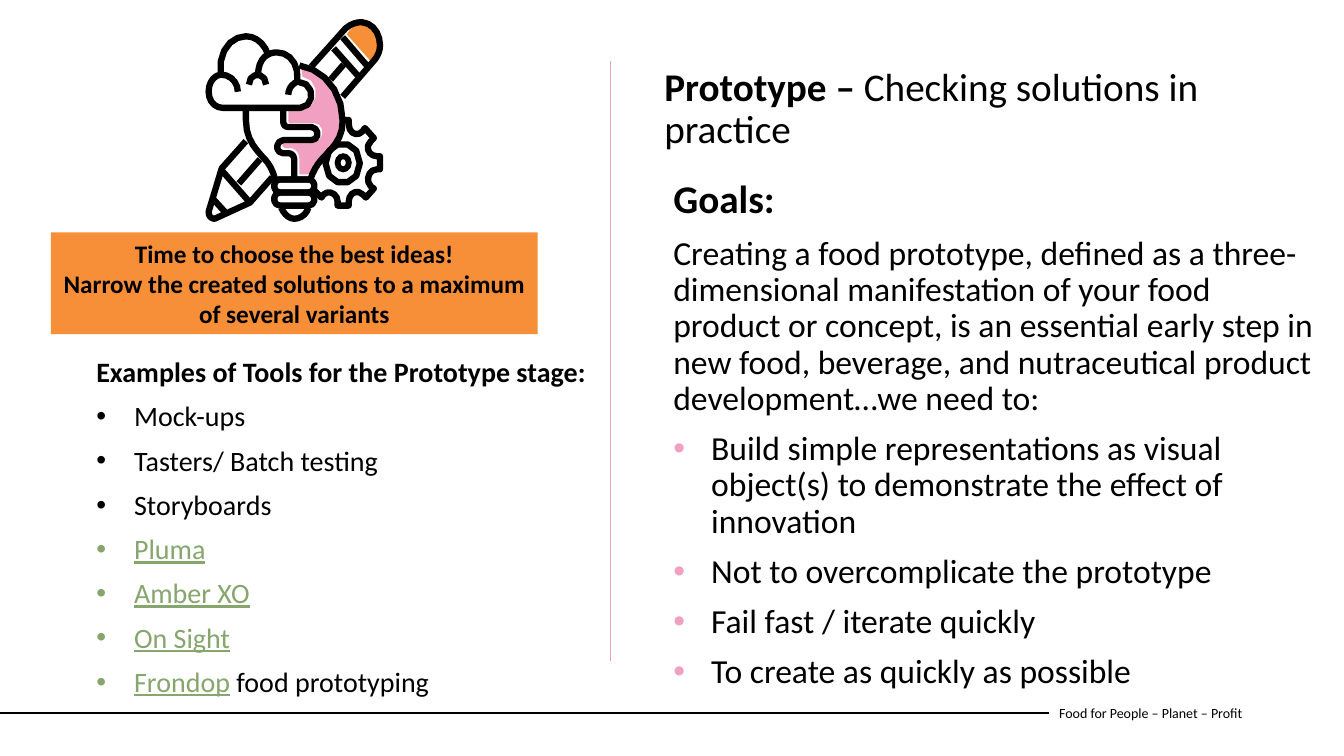
import lxml.etree
import pptx
import pptx.dml.color
import pptx.enum.shapes
import pptx.enum.text
import pptx.oxml.ns
import pptx.util

ROWS = 750
COLUMNS = ROWS * 16 / 9
CELL = pptx.util.Inches(7.5) / ROWS
BLACK, PINK, ORANGE, GREEN = "000000", "F1A0C2", "F68F37", "87A66E"

GOALS = [
    "Build simple representations as visual object(s) to demonstrate the effect of innovation",
    "Not to overcomplicate the prototype",
    "Fail fast / iterate quickly",
    "To create as quickly as possible",
]
PURPOSE = (
    "Creating a food prototype, defined as a three-dimensional manifestation of your food "
    "product or concept, is an essential early step in new food, beverage, and nutraceutical "
    "product development…we need to:"
)
METHODS = ["Mock-ups", "Tasters/ Batch testing", "Storyboards"]
LINKED_TOOLS = [("Pluma", ""), ("Amber XO", ""), ("On Sight", ""), ("Frondop", " food prototyping")]

ERASER = [(344, 34), (347, 30), (351, 26, 355, 24, 359, 24), (369, 24, 377, 33, 377, 44),
          (377, 49, 375, 54, 372, 57), (368, 61)]
BULB_SHADE = [(340, 118), (340, 135, 332, 143, 324, 152), (319, 158, 313, 164, 310, 173), (297, 173),
              (297, 157), (297, 152, 293, 147, 288, 147), (283, 147), (279, 146, 279, 141, 283, 141),
              (311, 141), (323, 140, 323, 122, 311, 122), (288, 122), (286, 122, 286, 120, 286, 118),
              (286, 109), (300, 109), (318, 107, 318, 78, 300, 76), (299, 67), (322, 69, 340, 92, 340, 118)]
PENCIL = [
    [(309, 66), (343, 28), (350, 22, 357, 22, 359, 22), (370, 23, 377, 33, 377, 45),
     (377, 52, 374, 56, 372, 59), (340, 96)],
    [(244, 140), (220, 167), (207, 210), (207, 215, 210, 217, 213, 217), (248, 201), (270, 176)],
    [(340, 37), (364, 65)],
    [(331, 48), (355, 75)],
    [(341, 64), (328, 79)],
    [(258, 158), (237, 182)],
    [(220, 169), (248, 201)],
    [(212, 198), (223, 210)],
]
GEAR = [
    [(341, 119), (346, 119), (346, 123), (346, 133, 355, 136, 360, 130), (362, 127), (371, 137),
     (368, 140), (361, 147, 367, 155, 374, 155), (377, 155), (377, 168), (374, 168),
     (366, 168, 362, 179, 368, 185), (371, 187), (363, 196), (360, 193),
     (354, 187, 346, 192, 346, 200), (346, 204), (335, 204), (335, 200),
     (335, 192, 326, 188, 321, 193), (319, 196), (312, 189)],
    [(323, 162), (323, 136, 357, 136, 357, 162), (357, 188, 323, 188, 323, 162)],
]
BULB = [
    [(297, 65), (320, 68, 340, 90, 340, 120), (340, 136, 332, 145, 322, 155),
     (317, 160, 311, 168, 308, 178), (273, 178), (270, 166, 265, 160, 260, 155),
     (252, 146, 244, 137, 244, 119), (244, 107)],
    [(281, 107), (281, 120), (281, 124, 283, 126, 286, 126), (309, 126), (317, 127, 317, 139, 309, 139),
     (281, 139), (273, 140, 273, 152, 281, 152), (286, 152), (290, 152, 292, 155, 292, 159), (292, 178)],
    [(279, 206), (282, 213, 287, 217, 292, 217), (298, 217, 304, 213, 306, 206)],
]
SOCKET = [[(278, top), (306, top), (314, top, 314, top + 13, 306, top + 13),
           (278, top + 13), (270, top + 13, 270, top, 278, top)] for top in (178, 191)]
CLOUD = [
    [(221, 107), (298, 107), (313, 106, 313, 81, 295, 81), (297, 62, 286, 52, 275, 52),
     (271, 52, 268, 53, 266, 54), (262, 43, 254, 36, 244, 36), (230, 36, 216, 50, 219, 74),
     (212, 75, 207, 82, 207, 91), (207, 100, 213, 107, 221, 107)],
    [(266, 54), (260, 57, 256, 64, 256, 75)],
    [(219, 74), (229, 74, 236, 82, 236, 91)],
    [(247, 84), (247, 71, 264, 71, 264, 84)],
    [(295, 81), (290, 83, 286, 88, 286, 94)],
]


def rgb(code):
    """Turn a hex string into a colour."""
    return pptx.dml.color.RGBColor.from_string(code)


def grid(*cells):
    """Turn counts of grid cells into lengths."""
    return [pptx.util.Emu(round(cell * CELL)) for cell in cells]


def move(placeholder, left, top, width, height):
    """Move a placeholder on the grid and return its text frame."""
    placeholder.left, placeholder.top, placeholder.width, placeholder.height = grid(left, top, width, height)
    frame = placeholder.text_frame
    frame.word_wrap = True
    frame.auto_size = pptx.enum.text.MSO_AUTO_SIZE.NONE
    frame.vertical_anchor = pptx.enum.text.MSO_ANCHOR.TOP
    return frame


def style(font, size=None, color=None, bold=None, underline=None):
    """Format a font with the given values."""
    font.name = "Calibri"
    if size:
        font.size = pptx.util.Pt(size)
    if color:
        font.color.rgb = rgb(color)
    font.bold, font.underline = bold, underline


def write(frame, runs, size, bold=False, bullet=None, bullet_color=None):
    """Add a paragraph of (text, format) runs, with or without a bullet."""
    paragraph = frame.paragraphs[0]
    if paragraph.runs:
        paragraph = frame.add_paragraph()
    paragraph.alignment = pptx.enum.text.PP_ALIGN.LEFT
    paragraph.line_spacing = 0.9
    paragraph.space_before = pptx.util.Pt(10)
    properties = paragraph._p.get_or_add_pPr()
    indent = grid(37.5)[0] if bullet else 0
    properties.set("marL", str(indent))
    properties.set("indent", str(-indent))
    qn = pptx.oxml.ns.qn
    if bullet_color:
        tint = lxml.etree.SubElement(properties, qn("a:buClr"))
        lxml.etree.SubElement(tint, qn("a:srgbClr"), val=bullet_color)
    if bullet:
        lxml.etree.SubElement(properties, qn("a:buFont"), typeface="Arial")
        lxml.etree.SubElement(properties, qn("a:buChar"), char=bullet)
    else:
        lxml.etree.SubElement(properties, qn("a:buNone"))
    style(paragraph.font, size, BLACK, bold)
    for text, changes in runs:
        run = paragraph.add_run()
        run.text = text
        if changes:
            style(run.font, **changes)


def paint(shape, fill=None, stroke=None):
    """Set the fill and the black outline of a shape."""
    shape.shadow.inherit = False
    if fill:
        shape.fill.solid()
        shape.fill.fore_color.rgb = rgb(fill)
    else:
        shape.fill.background()
    if stroke:
        shape.line.color.rgb = rgb(BLACK)
        shape.line.width = pptx.util.Pt(stroke)
    else:
        shape.line.fill.background()


def flatten(steps, parts=5):
    """Turn points and Bézier steps into a list of lengths."""
    points = [steps[0]]
    for step in steps[1:]:
        if len(step) == 2:
            points.append(step)
            continue
        knots = [points[-1], step[:2], step[2:4], step[4:]]
        for t in (i / parts for i in range(1, parts + 1)):
            weights = ((1 - t) ** 3, 3 * t * (1 - t) ** 2, 3 * t * t * (1 - t), t ** 3)
            points.append(tuple(sum(w * k[axis] for w, k in zip(weights, knots)) for axis in (0, 1)))
    return [grid(*point) for point in points]


def outline(shapes, strands, fill=None, stroke=None):
    """Draw one outline made of several strands of points and curves."""
    first, *others = [flatten(strand) for strand in strands]
    builder = shapes.build_freeform(*first[0])
    builder.add_line_segments(first[1:], close=bool(fill))
    for strand in others:
        builder.move_to(*strand[0])
        builder.add_line_segments(strand[1:], close=bool(fill))
    paint(builder.convert_to_shape(), fill, stroke)


def preset(shapes, kind, box, fill):
    """Draw a filled preset shape on the grid."""
    shape = shapes.add_shape(getattr(pptx.enum.shapes.MSO_SHAPE, kind), *grid(*box))
    paint(shape, fill)
    return shape


def rule(shapes, start, end, color, width):
    """Draw a straight line on the grid."""
    line = shapes.add_connector(pptx.enum.shapes.MSO_CONNECTOR.STRAIGHT, *grid(*start, *end))
    line.line.color.rgb = rgb(color)
    line.line.width = pptx.util.Pt(width)
    lxml.etree.SubElement(line._element.spPr, pptx.oxml.ns.qn("a:effectLst"))
    return line


def main():
    """Build the slide and save it."""
    deck = pptx.Presentation()
    deck.slide_width, deck.slide_height = grid(COLUMNS, ROWS)
    slide = deck.slides.add_slide(deck.slide_layouts[3])
    shapes = slide.shapes

    heading = move(shapes.title, 649, 62, 641, 125)
    write(heading, [("Prototype – ", {"bold": True}), ("Checking solutions in practice", None)], 28)

    tools = move(slide.placeholders[1], 85.5, 350.5, 508, 376)
    write(tools, [("Examples of Tools for the Prototype stage:", None)], 20, bold=True)
    for method in METHODS:
        write(tools, [(method, None)], 20, bullet="•")
    for tool, remark in LINKED_TOOLS:
        runs = [(tool, {"color": GREEN, "underline": True})] + ([(remark, None)] if remark else [])
        write(tools, runs, 20, bullet="•")

    goals = move(slide.placeholders[2], 658, 173.4, 662, 407)
    write(goals, [("Goals:", None)], 28, bold=True)
    write(goals, [(PURPOSE, None)], 24)
    for goal in GOALS:
        write(goals, [(goal, None)], 24, bullet="•", bullet_color=PINK)

    callout = preset(shapes, "RECTANGLE", (50.5, 230.5, 483, 101), ORANGE).text_frame
    callout.word_wrap = True
    callout.text = ("Time to choose the best ideas!\n"
                    "Narrow the created solutions to a maximum of several variants")
    for paragraph in callout.paragraphs:
        paragraph.alignment = pptx.enum.text.PP_ALIGN.CENTER
        style(paragraph.font, 18, BLACK, True)

    motto = shapes.add_textbox(*grid(1041, 687, 273, 40))
    motto.text_frame.word_wrap = True
    motto.text_frame.vertical_anchor = pptx.enum.text.MSO_ANCHOR.MIDDLE
    motto.text_frame.text = "Food for People – Planet – Profit"
    style(motto.text_frame.paragraphs[0].font, 10, BLACK)

    rule(shapes, (0, 707), (1041, 707), BLACK, 1.5).end_connect(motto, 1)
    rule(shapes, (605.5, 60.4), (605.5, 656), PINK, 0.5)

    outline(shapes, [ERASER], fill=ORANGE)
    outline(shapes, [BULB_SHADE], fill=PINK)
    preset(shapes, "DONUT", (332, 152, 17, 19), BLACK).adjustments[0] = 0.35
    outline(shapes, PENCIL + GEAR + BULB + SOCKET + CLOUD, stroke=4.5)
    deck.save("out.pptx")


if __name__ == "__main__":
    main()
